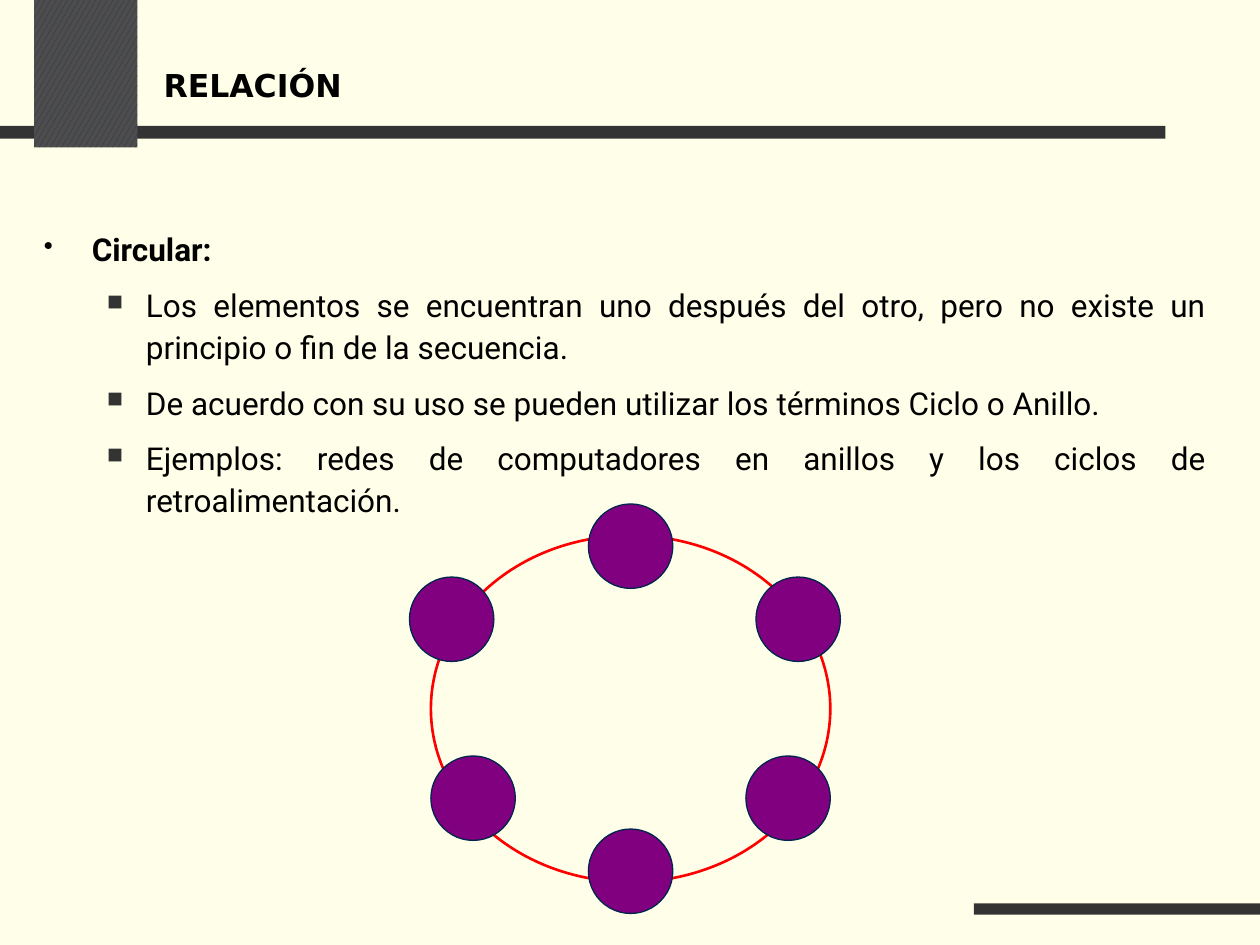
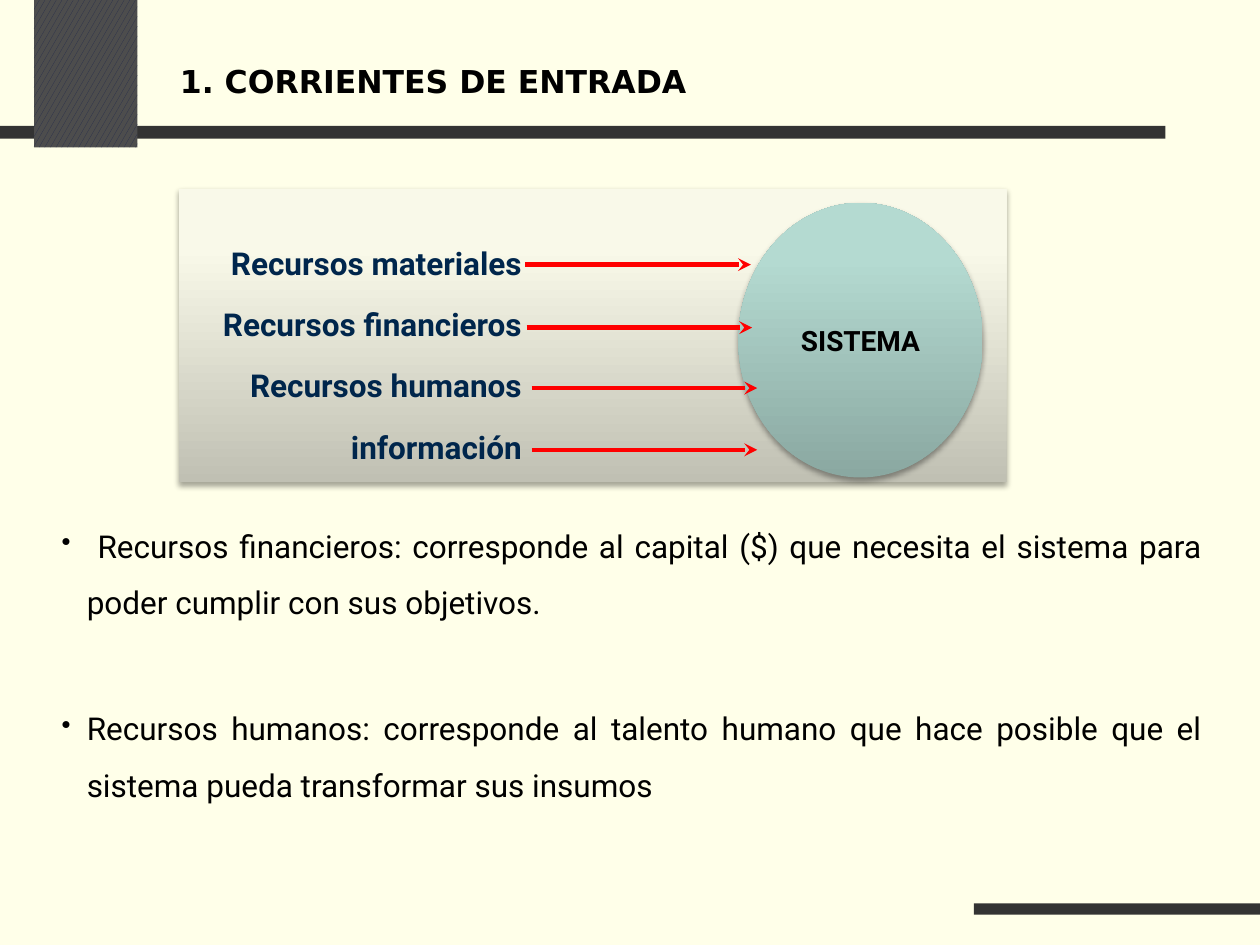
from dataclasses import dataclass
from typing import NamedTuple, Optional

from lxml import etree
from pptx import Presentation
from pptx.dml.color import RGBColor
from pptx.enum.dml import MSO_PATTERN
from pptx.enum.shapes import MSO_CONNECTOR, MSO_SHAPE
from pptx.enum.text import MSO_ANCHOR, MSO_AUTO_SIZE, PP_ALIGN
from pptx.oxml import parse_xml
from pptx.oxml.ns import qn
from pptx.util import Inches, Pt

RECT, OVAL = MSO_SHAPE.RECTANGLE, MSO_SHAPE.OVAL
STRAIGHT = MSO_CONNECTOR.STRAIGHT
CONFETTI = MSO_PATTERN.LARGE_CONFETTI
TOP, MIDDLE, BOTTOM = MSO_ANCHOR.TOP, MSO_ANCHOR.MIDDLE, MSO_ANCHOR.BOTTOM
LEFT, CENTER, RIGHT = PP_ALIGN.LEFT, PP_ALIGN.CENTER, PP_ALIGN.RIGHT
JUSTIFY = PP_ALIGN.JUSTIFY
FIT_SHAPE = MSO_AUTO_SIZE.SHAPE_TO_FIT_TEXT
A_NS = "http://schemas.openxmlformats.org/drawingml/2006/main"


@dataclass(frozen=True)
class Theme:
    background: str = "FFFFE9"
    bar: str = "333333"
    block_fore: str = "262D4C"
    block_back: str = "4D4D4D"
    text: str = "000000"
    navy: str = "00264C"
    red: str = "FF0000"
    purple: str = "800080"
    panel: tuple = ((0, "C0C0B3"), (80, "F9F9E9"), (100, "FAFAE9"))
    system: tuple = ((0, "8AA8A1"), (80, "B4DAD1"), (100, "B4DBD2"))
    title_font: str = "DejaVu Sans"
    body_font: str = "Roboto"
    size: int = 18
    system_size: int = 16


THEME = Theme()


class Box(NamedTuple):
    left: float
    top: float
    width: float
    height: float


class Bullet(NamedTuple):
    char: str
    percent: int
    margin: float
    hang: float
    color: Optional[str] = None


class Arrow(NamedTuple):
    left: float
    y: float


DOT = Bullet("•", 85, 0.38, 0.38)
SQUARE = Bullet("■", 70, 0.81, 0.31, THEME.bar)
TIGHT_DOT = Bullet("•", 85, 0.2, 0.2)

BARS = (Box(0, 1, 9.25, 0.1), Box(7.73, 7.17, 2.27, 0.09))
BLOCK = Box(0.27, 0, 0.82, 1.17)

NODE_SIZE = 0.67
NODES = ((4.67, 4), (3.25, 4.58), (3.42, 6), (4.67, 6.58), (5.92, 6), (6, 4.58))
ARROW_LENGTH = 1.79
ARROWS = (Arrow(4.17, 2.1), Arrow(4.18, 2.6), Arrow(4.22, 3.08), Arrow(4.22, 3.57))


def rgb(color: str) -> RGBColor:
    return RGBColor.from_string(color)


def inches(box: Box) -> list:
    return [Inches(v) for v in box]


def add_shape(s, kind, box: Box, *, fill: Optional[str] = None,
              line: Optional[str] = None, weight: float = 0.75):
    sp = s.shapes.add_shape(kind, *inches(box))
    sp.shadow.inherit = False
    if fill:
        sp.fill.solid()
        sp.fill.fore_color.rgb = rgb(fill)
    else:
        sp.fill.background()
    if line:
        sp.line.color.rgb = rgb(line)
        sp.line.width = Pt(weight)
    else:
        sp.line.fill.background()
    return sp


def add_shaded_shape(s, kind, box: Box, stops: tuple):
    sp = add_shape(s, kind, box)
    spPr = sp.element.spPr
    gs = "".join(f'<a:gs pos="{pos * 1000}"><a:srgbClr val="{color}"/></a:gs>'
                 for pos, color in stops)
    gradient = parse_xml(f'<a:gradFill xmlns:a="{A_NS}" rotWithShape="1"><a:gsLst>{gs}'
                         '</a:gsLst><a:lin ang="16200000" scaled="0"/></a:gradFill>')
    spPr.replace(spPr.find(qn("a:noFill")), gradient)
    shadow = parse_xml(f'<a:effectLst xmlns:a="{A_NS}"><a:outerShdw blurRad="{Pt(3.1)}" '
                       f'dist="{Pt(1.8)}" dir="5400000" rotWithShape="0">'
                       '<a:srgbClr val="000000"><a:alpha val="35000"/></a:srgbClr>'
                       '</a:outerShdw></a:effectLst>')
    spPr.replace(spPr.find(qn("a:effectLst")), shadow)
    return sp


def add_arrow(s, arrow: Arrow) -> None:
    y = Inches(arrow.y)
    cn = s.shapes.add_connector(STRAIGHT, Inches(arrow.left), y,
                                Inches(arrow.left + ARROW_LENGTH), y)
    cn.line.color.rgb = rgb(THEME.red)
    cn.line.width = Pt(2.5)
    spPr = cn.element.spPr
    etree.SubElement(spPr.find(qn("a:ln")), qn("a:tailEnd"), type="stealth")
    etree.SubElement(spPr, qn("a:effectLst"))


def add_text_box(s, box: Box, anchor=TOP):
    tf = s.shapes.add_textbox(*inches(box)).text_frame
    tf.word_wrap = True
    tf.vertical_anchor = anchor
    return tf


def set_bullet(p, bullet: Bullet) -> None:
    pPr = p._p.get_or_add_pPr()
    pPr.set("marL", str(Inches(bullet.margin)))
    pPr.set("indent", str(-Inches(bullet.hang)))
    if bullet.color:
        color = etree.SubElement(pPr, qn("a:buClr"))
        etree.SubElement(color, qn("a:srgbClr"), val=bullet.color)
    etree.SubElement(pPr, qn("a:buSzPct"), val=str(bullet.percent * 1000))
    etree.SubElement(pPr, qn("a:buChar"), char=bullet.char)


def add_paragraph(tf, text: str, *, font: str = THEME.body_font, size: int = THEME.size,
                  color: str = THEME.text, bold: bool = False, align=LEFT,
                  spacing: float = 1.0, before: float = 0, level: int = 0,
                  bullet: Optional[Bullet] = None) -> None:
    first = not tf.paragraphs[0].runs
    p = tf.paragraphs[0] if first else tf.add_paragraph()
    if bullet:
        set_bullet(p, bullet)
    p.level = level
    p.alignment = align
    p.line_spacing = spacing
    p.space_before = Pt(0 if first else before)
    r = p.add_run()
    r.text = text
    r.font.name = font
    r.font.size = Pt(size)
    r.font.bold = bold
    r.font.color.rgb = rgb(color)


def add_base_slide(prs, title: str, title_box: Box):
    s = prs.slides.add_slide(prs.slide_layouts[6])
    s.background.fill.solid()
    s.background.fill.fore_color.rgb = rgb(THEME.background)
    for bar in BARS:
        add_shape(s, RECT, bar, fill=THEME.bar)
    block = add_shape(s, RECT, BLOCK)
    block.fill.patterned()
    block.fill.pattern = CONFETTI
    block.fill.fore_color.rgb = rgb(THEME.block_fore)
    block.fill.back_color.rgb = rgb(THEME.block_back)
    tf = add_text_box(s, title_box, BOTTOM)
    add_paragraph(tf, title, font=THEME.title_font, bold=True)
    return s


def build_circular_relation(prs) -> None:
    s = add_base_slide(prs, "RELACIÓN", Box(1.2, 0.29, 8.5, 0.58))
    add_shape(s, OVAL, Box(3.42, 4.25, 3.17, 2.75), line=THEME.red, weight=1.5)
    tf = add_text_box(s, Box(0.25, 1.75, 9.42, 5.17))
    add_paragraph(tf, "Circular:", bold=True, align=JUSTIFY, spacing=1.1, bullet=DOT)
    for text in (
        "Los elementos se encuentran uno después del otro, pero no existe un "
        "principio o fin de la secuencia.",
        "De acuerdo con su uso se pueden utilizar los términos Ciclo o Anillo.",
        "Ejemplos: redes de computadores en anillos y los ciclos de retroalimentación.",
    ):
        add_paragraph(tf, text, align=JUSTIFY, spacing=1.1, before=8.1, level=1,
                      bullet=SQUARE)
    for left, top in NODES:
        add_shape(s, OVAL, Box(left, top, NODE_SIZE, NODE_SIZE),
                  fill=THEME.purple, line=THEME.navy)


def build_input_streams(prs) -> None:
    s = add_base_slide(prs, "1. CORRIENTES DE ENTRADA", Box(1.33, 0.42, 8.07, 0.42))
    tf = add_text_box(s, Box(0.39, 3.98, 9.25, 3.25))
    for text in (
        " Recursos financieros: corresponde al capital ($) que necesita el sistema "
        "para poder cumplir con sus objetivos.",
        "Recursos humanos: corresponde al talento humano que hace posible que el "
        "sistema pueda transformar sus insumos",
    ):
        add_paragraph(tf, text, align=JUSTIFY, spacing=1.5, before=39.5, bullet=TIGHT_DOT)

    add_shaded_shape(s, RECT, Box(1.42, 1.5, 6.57, 2.33), THEME.panel)
    system = add_shaded_shape(s, OVAL, Box(5.86, 1.61, 1.94, 2.18), THEME.system)
    tf = system.text_frame
    tf.word_wrap = False
    tf.vertical_anchor = MIDDLE
    add_paragraph(tf, "SISTEMA", size=THEME.system_size, bold=True, align=CENTER)
    for arrow in ARROWS:
        add_arrow(s, arrow)

    tf = add_text_box(s, Box(0.92, 1.83, 3.32, 2))
    tf.auto_size = FIT_SHAPE
    for label in ("Recursos materiales", "Recursos financieros",
                  "Recursos humanos", "información"):
        add_paragraph(tf, label, color=THEME.navy, bold=True, align=RIGHT,
                      spacing=1.2, before=9)


def main() -> None:
    prs = Presentation()
    prs.slide_width, prs.slide_height = Inches(10), Inches(7.5)
    build_circular_relation(prs)
    build_input_streams(prs)
    prs.save("out.pptx")


if __name__ == "__main__":
    main()
